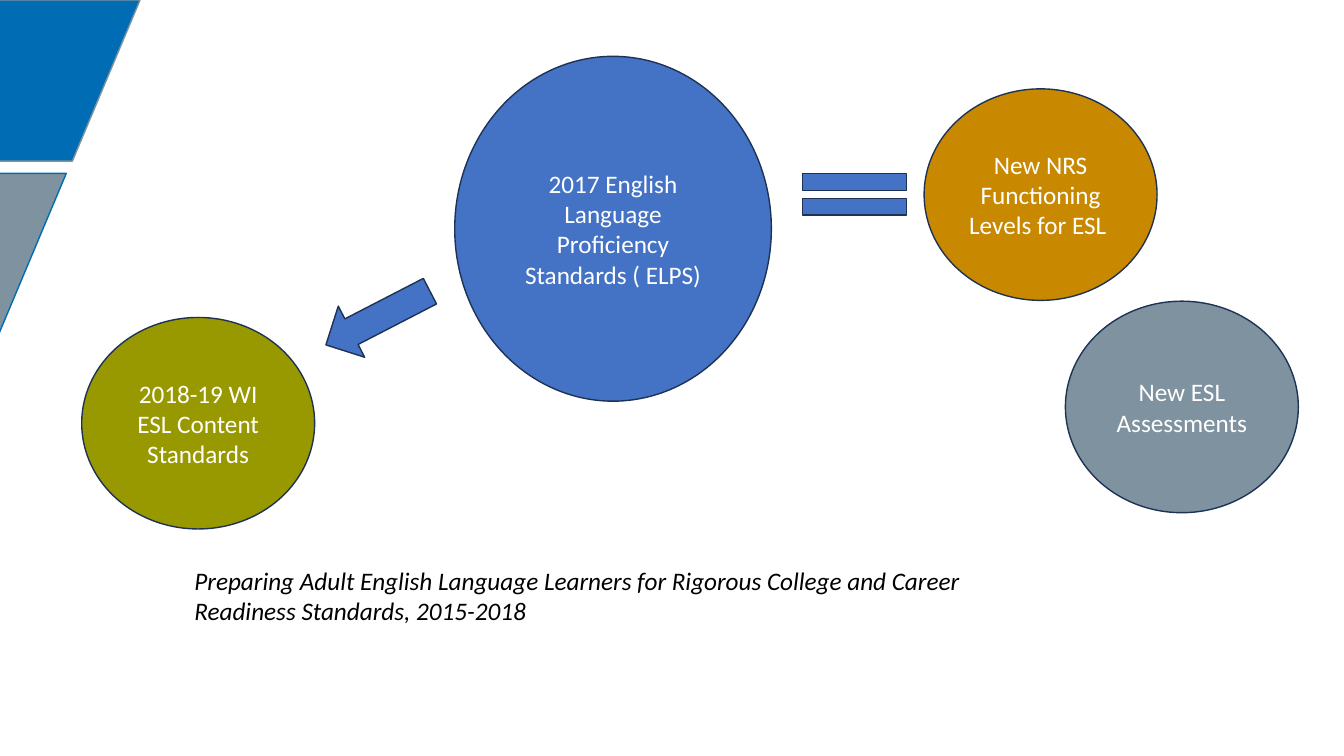
from pptx import Presentation
from pptx.dml.color import RGBColor
from pptx.enum.shapes import MSO_SHAPE
from pptx.enum.text import MSO_ANCHOR, PP_ALIGN
from pptx.util import Cm, Pt

COLORS = {
    "banner_blue": "006CB3",
    "slate": "7E929F",
    "blue": "4472C4",
    "outline": "1E3256",
    "amber": "C88800",
    "olive": "989800",
    "white": "FFFFFF",
    "black": "000000",
}
FONT = "Calibri"
SMALL_CIRCLE = (5.87, 5.33)


def color(name):
    return RGBColor.from_string(COLORS[name])


def add_filled_shape(slide, kind, box, fill, line="outline"):
    """Add a flat preset shape; box is left, top, width, height in cm."""
    shape = slide.shapes.add_shape(kind, *map(Cm, box))
    shape.shadow.inherit = False
    shape.fill.solid()
    shape.fill.fore_color.rgb = color(fill)
    shape.line.color.rgb = color(line)
    shape.line.width = Pt(1)
    return shape


def write_text(shape, text, text_color, alignment, italic=None):
    text_frame = shape.text_frame
    text_frame.word_wrap = True
    text_frame.text = text
    paragraph = text_frame.paragraphs[0]
    paragraph.alignment = alignment
    font = paragraph.runs[0].font
    font.name = FONT
    font.size = Pt(18)
    font.italic = italic
    font.color.rgb = color(text_color)


def add_circle(slide, box, text, fill):
    circle = add_filled_shape(slide, MSO_SHAPE.FLOWCHART_CONNECTOR, box, fill)
    circle.text_frame.vertical_anchor = MSO_ANCHOR.MIDDLE
    write_text(circle, text, "white", PP_ALIGN.CENTER)


def add_corner_banners(slide, left, top, width, height):
    """Stack two slanted bands, the lower one continuing the slant."""
    step_left, step_top = -1.86, 4.37
    bands = [("banner_blue", "slate"), ("slate", "banner_blue")]
    for index, (fill, line) in enumerate(bands):
        box = (left + index * step_left, top + index * step_top, width, height)
        add_filled_shape(slide, MSO_SHAPE.FLOWCHART_DATA, box, fill, line)


def add_standards_diagram(slide, left, top):
    """Place the circles and their links relative to the top left corner."""
    circles = [
        (9.4, 0, 7.98, 8.69, "2017 English Language Proficiency Standards ( ELPS)", "blue"),
        (21.23, 0.82, *SMALL_CIRCLE, "New NRS Functioning Levels for ESL ", "amber"),
        (24.79, 6.17, *SMALL_CIRCLE, "New ESL Assessments", "slate"),
        (0, 6.58, *SMALL_CIRCLE, "2018-19 WI ESL Content Standards", "olive"),
    ]
    for x, y, width, height, text, fill in circles:
        add_circle(slide, (left + x, top + y, width, height), text, fill)

    add_filled_shape(slide, MSO_SHAPE.MATH_EQUAL,
                     (left + 17.7, top + 2.59, 3.56, 1.78), "blue")
    arrow = add_filled_shape(slide, MSO_SHAPE.LEFT_ARROW,
                             (left + 5.99, top + 5.87, 2.95, 1.45), "blue")
    arrow.rotation = 332.7


def add_caption(slide, left, top, width, height):
    caption = slide.shapes.add_textbox(Cm(left), Cm(top), Cm(width), Cm(height))
    write_text(
        caption,
        "Preparing Adult English Language Learners for Rigorous College and "
        "Career Readiness Standards, 2015-2018",
        "black", PP_ALIGN.LEFT, italic=True)


def main():
    presentation = Presentation()
    presentation.slide_width = Cm(33.87)
    presentation.slide_height = Cm(19.05)
    blank_layout = presentation.slide_layouts[6]
    slide = presentation.slides.add_slide(blank_layout)
    add_corner_banners(slide, -5, 0, 8.53, 4.06)
    add_standards_diagram(slide, 2.06, 1.42)
    add_caption(slide, 4.65, 14.12, 21.06, 1.8)
    presentation.save("out.pptx")


if __name__ == "__main__":
    main()
